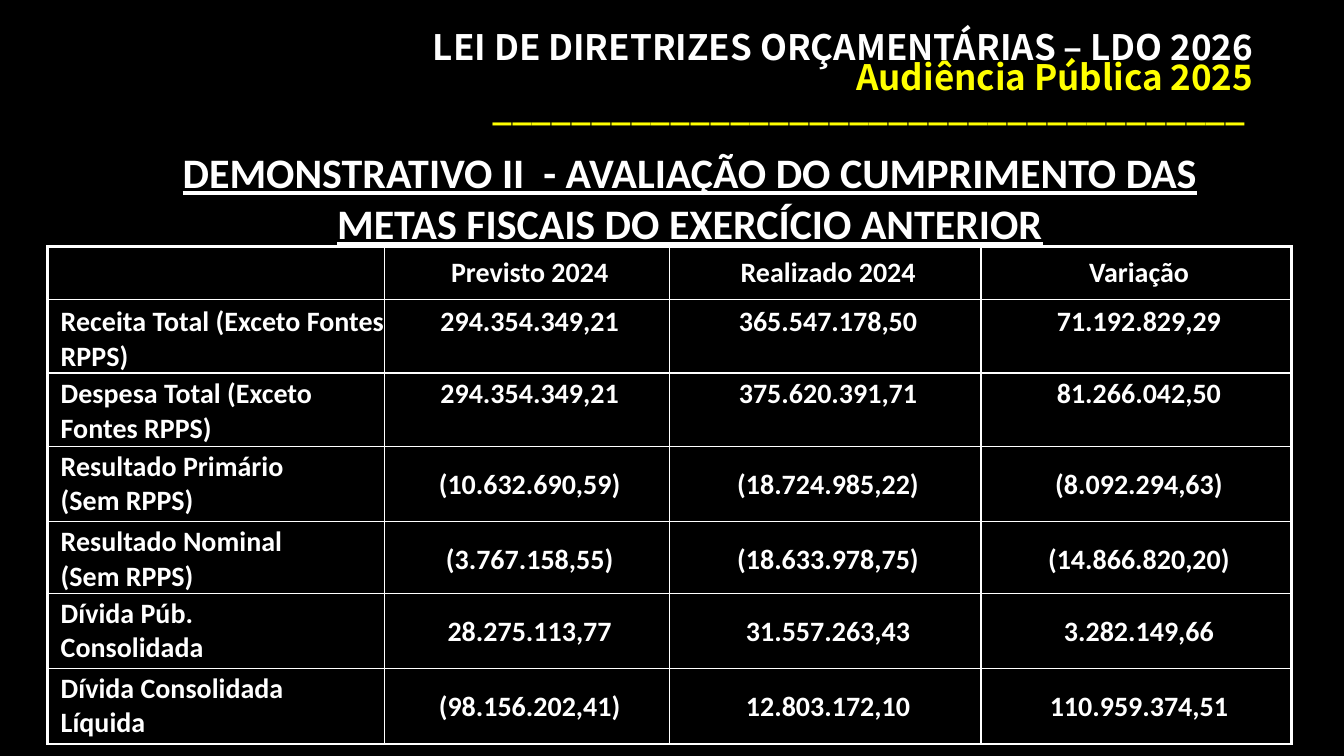
from lxml.etree import SubElement as Sub
from pptx import Presentation
from pptx.dml.color import RGBColor as RGB
from pptx.enum.text import MSO_ANCHOR as Anchor, PP_ALIGN as Align
from pptx.oxml.ns import qn
from pptx.util import Cm, Pt

WHITE, YELLOW, BLACK = "FFFFFF", "FFFF00", "000000"
SANS, CJK = "Calibri", "Noto Sans CJK JP"
COLS = [8.48, 7.19, 7.85, 7.82]
ROWS = [1.33, 1.86, 1.85, 1.9, 1.8, 1.9, 1.9]
TOPS = [0.23, 0.15, 0.1, 0.53, 0.53, 0.53, 0.53]
DATA = [
    ["", "Previsto 2024", "Realizado 2024", "Variação"],
    ["Receita Total (Exceto Fontes RPPS)", "294.354.349,21", "365.547.178,50", "71.192.829,29"],
    ["Despesa Total (Exceto Fontes RPPS)", "294.354.349,21", "375.620.391,71", "81.266.042,50"],
    ["Resultado Primário (Sem RPPS)", "(10.632.690,59)", "(18.724.985,22)", "(8.092.294,63)"],
    ["Resultado Nominal (Sem RPPS)", "(3.767.158,55)", "(18.633.978,75)", "(14.866.820,20)"],
    ["Dívida Púb. Consolidada", "28.275.113,77", "31.557.263,43", "3.282.149,66"],
    ["Dívida Consolidada Líquida", "(98.156.202,41)", "12.803.172,10", "110.959.374,51"],
]


def paint(fill, tone):
    """Give a fill one solid colour."""
    fill.solid()
    fill.fore_color.rgb = RGB.from_string(tone)


def style(para, size, face, align, tones=(WHITE,), under=None):
    """Format the runs of a paragraph, the last tone serving all later runs."""
    para.alignment = align
    for i, run in enumerate(para.runs):
        font = run.font
        font.size, font.name, font.bold, font.underline = Pt(size), face, True, under
        paint(font.fill, tones[min(i, len(tones) - 1)])


def label(slide, text, left, top, width, height):
    """Add a wrapping text box and return its frame."""
    frame = slide.shapes.add_textbox(Cm(left), Cm(top), Cm(width), Cm(height)).text_frame
    frame.word_wrap = True
    frame.text = text
    return frame


def edge(cell, sides):
    """Draw white cell borders, given as a width in points for each side."""
    props = cell._tc.get_or_add_tcPr()
    for side, width in sides.items():
        line = Sub(props, qn("a:ln" + side), w=str(Pt(width)))
        Sub(Sub(line, qn("a:solidFill")), qn("a:srgbClr"), val=WHITE)


def fill_cell(cell, text, row, col):
    """Write one table cell with its insets, borders and text style."""
    first, last = col == 0, col == len(COLS) - 1
    edge(cell, {
        "L": 2.25 if first else 1,
        "R": 2.25 if last else 1,
        "T": 2.25 if row == 0 else 1,
        "B": 2.25 if row == len(ROWS) - 1 else 1,
    })
    cell.fill.background()
    cell.vertical_anchor = Anchor.TOP
    cell.margin_left = Cm(0.33 if first else 0.15)
    cell.margin_right = Cm(1.8 if first and row > 2 else 0)
    cell.margin_top = Cm(0.08 if first and row > 2 else TOPS[row])
    cell.margin_bottom = 0
    cell.text = text
    style(cell.text_frame.paragraphs[0], 20, SANS, Align.LEFT if first else Align.CENTER)


def add_grid(slide):
    """Add the table of fiscal targets."""
    grid = slide.shapes.add_table(
        len(ROWS), len(COLS), Cm(1.2), Cm(6.21), Cm(sum(COLS)), Cm(sum(ROWS))).table
    grid.first_row = grid.horz_banding = False
    for col, width in zip(grid.columns, COLS):
        col.width = Cm(width)
    for row, height in zip(grid.rows, ROWS):
        row.height = Cm(height)
    for r, line in enumerate(DATA):
        for c, text in enumerate(line):
            fill_cell(grid.cell(r, c), text, r, c)


def main():
    """Build the slide and save it."""
    deck = Presentation()
    deck.slide_width, deck.slide_height = Cm(33.87), Cm(19.05)
    slide = deck.slides.add_slide(deck.slide_layouts[6])
    paint(slide.background.fill, BLACK)

    lines = ["LEI DE DIRETRIZES ORÇAMENTÁRIAS – LDO 2026",
             "Audiência Pública 2025", "_" * 38 + " "]
    head = label(slide, "\v".join(lines), 2.62, 0.91, 29.21, 3.68)
    head.margin_top = 0
    style(head.paragraphs[0], 25, CJK, Align.RIGHT, (WHITE, YELLOW))
    head.paragraphs[0].line_spacing = 0.72

    add_grid(slide)

    name = label(slide, "DEMONSTRATIVO II  - AVALIAÇÃO DO CUMPRIMENTO DAS "
                 "METAS FISCAIS DO EXERCÍCIO ANTERIOR", 4.04, 3.58, 26.7, 2.82)
    style(name.paragraphs[0], 30, SANS, Align.CENTER, under=True)
    deck.save("out.pptx")


if __name__ == "__main__":
    main()
